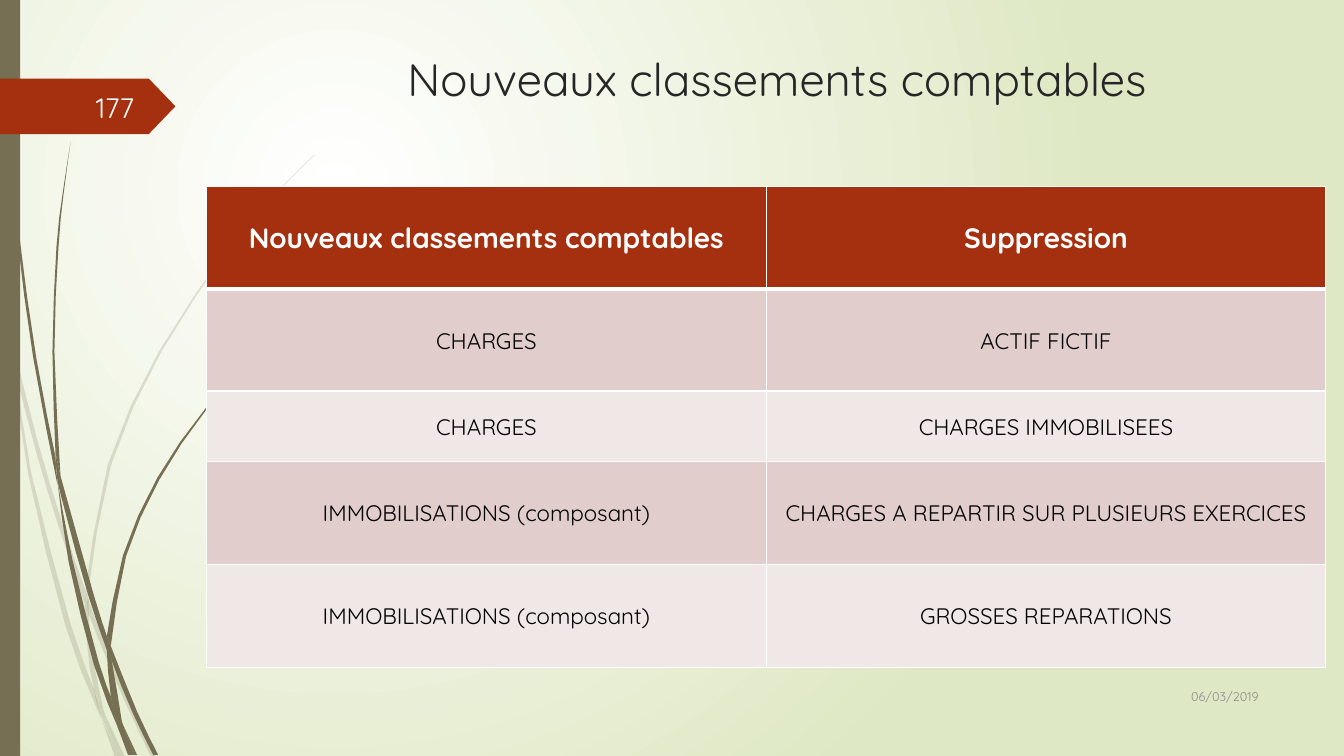
from lxml import etree
from pptx import Presentation
from pptx import util as u
from pptx.dml.color import RGBColor
from pptx.enum import shapes, text
from pptx.oxml.ns import qn

COLORS = {
    "white": "FFFFFF", "meadow": "DFE8C4", "stem": "766F54", "brick": "A53010",
    "title": "262626", "date": "8C8C8C", "number": "FEFFFF", "body": "000000",
    "rose": "E1CDCC", "blush": "F0E8E7",
}
FONT = "Quicksand"
CURVE_STEPS = 2

PALE_BLADES = [
    ([(.11, 3.5), (.09, 3.22), (0, 2.82)], [(0, 2.99), (.1, 3.44), (.11, 3.5)]),
    ([(.17, 3.76), (.36, 4.49), (.58, 5.22), (.84, 5.99)],
     [(.85, 5.86), (.62, 5.2), (.36, 4.33), (.14, 3.45)]),
    ([(.88, 5.96), (.88, 6.1), (1.23, 6.94), (1.5, 7.51)], [(1.55, 7.51), (1.27, 6.92), (.92, 6.07)]),
    ([(1.05, 7.11), (1.19, 7.51)], [(1.24, 7.51), (1.05, 7.11)]),
    ([(.11, 3.5), (.28, 4.7), (.65, 6.21), (.92, 6.93), (1.01, 7.14)],
     [(.99, 7.07), (.93, 6.83), (.7, 6.19), (.31, 4.69), (.17, 3.76)]),
    ([(.84, 5.99), (.87, 6.46), (.93, 6.83), (1.05, 7.11)], [(1.03, 7.06), (.91, 6.46), (.88, 6.08)]),
    ([(.88, 5.96), (.88, 5.84), (1.1, 4.62), (1.6, 3.49), (2.29, 2.45), (2.68, 1.98), (3.12, 1.54)],
     [(3.12, 1.53), (2.68, 1.97), (2.28, 2.44), (1.58, 3.48), (1.07, 4.61), (.85, 5.84)]),
    ([(1.01, 7.14), (1.14, 7.51)], [(1.19, 7.51), (1.01, 7.14)]),
    ([(.88, 6.1), (.88, 5.96)], [(.85, 5.86), (.84, 5.99)]),
    ([(.93, 6.83), (.99, 7.07), (1.19, 7.51)], [(1.19, 7.51), (1.05, 7.11), (.96, 6.92)]),
]
DARK_BLADES = [
    ([(.03, 0), (.07, 1.1), (.17, 2.33), (.33, 3.55), (.57, 4.81)],
     [(.55, 4.53), (.36, 3.55), (.19, 2.32), (.08, 1.09), (.04, 0)]),
    ([(.6, 4.72), (.64, 5.05), (.88, 5.92), (1.06, 6.45)], [(1.06, 6.31), (.93, 5.9), (.6, 4.72)]),
    ([(1.1, 6.41), (1.11, 6.56), (1.32, 7.08), (1.52, 7.49)], [(1.57, 7.49), (1.36, 7.06), (1.1, 6.41)]),
    ([(.57, 4.77), (.68, 5.57), (.93, 6.59), (1.17, 7.22)],
     [(1.1, 6.91), (.98, 6.57), (.72, 5.56), (.57, 4.77)]),
    ([(.6, 4.72), (.54, 3.49), (.58, 2.45), (.63, 1.93), (.7, 1.41)],
     [(.7, 1.41), (.62, 1.93), (.56, 2.45), (.52, 3.49), (.55, 4.49)]),
    ([(1.22, 7.19), (1.33, 7.49)], [(1.36, 7.49), (1.22, 7.19)]),
    ([(.55, 4.49), (.57, 4.77), (.64, 5.05)], [(.6, 4.72), (.55, 4.49)]),
    ([(1.1, 6.41), (1.11, 6.33), (1.25, 5.52), (1.58, 4.76), (2.05, 4.06), (2.61, 3.44)],
     [(2.6, 3.44), (2.04, 4.05), (1.56, 4.74), (1.22, 5.51), (1.06, 6.31)]),
    ([(1.17, 7.22), (1.27, 7.49)], [(1.31, 7.49), (1.17, 7.22)]),
    ([(1.06, 6.45), (1.1, 6.91), (1.22, 7.19)], [(1.21, 7.16), (1.11, 6.56), (1.06, 6.45)]),
    ([(1.06, 6.31), (1.06, 6.45)], [(1.11, 6.56), (1.1, 6.41)]),
    ([(1.1, 6.91), (1.17, 7.22), (1.3, 7.49)], [(1.33, 7.49), (1.22, 7.19), (1.1, 6.91)]),
]
CLASSEMENTS = [
    ("Nouveaux classements comptables", "Suppression"),
    ("CHARGES", "ACTIF FICTIF"),
    ("CHARGES", "CHARGES IMMOBILISEES"),
    ("IMMOBILISATIONS (composant)", "CHARGES A REPARTIR SUR PLUSIEURS EXERCICES"),
    ("IMMOBILISATIONS (composant)", "GROSSES REPARATIONS"),
]
ROW_HEIGHTS = [1.02, 1.01, .7, 1.02, 1.02]


def rgb(name):
    return RGBColor.from_string(COLORS[name])


def write(frame, words, size, color, align=text.PP_ALIGN.CENTER, bold=False):
    paragraph = frame.paragraphs[0]
    paragraph.alignment = align
    run = paragraph.add_run()
    run.text = words
    run.font.name = FONT
    run.font.size = u.Pt(size)
    run.font.bold = bold
    run.font.color.rgb = rgb(color)


def add_label(slide, box, words, anchor=text.MSO_ANCHOR.MIDDLE, **style):
    frame = slide.shapes.add_textbox(*map(u.Inches, box)).text_frame
    frame.word_wrap = True
    frame.vertical_anchor = anchor
    write(frame, words, **style)


def paint(shape, color, alpha=100):
    shape.shadow.inherit = False
    shape.fill.solid()
    shape.fill.fore_color.rgb = rgb(color)
    shape.line.fill.background()
    if alpha < 100:
        tint = shape.element.spPr.find(".//" + qn("a:srgbClr"))
        etree.SubElement(tint, qn("a:alpha"), val=str(alpha * 1000))


def smooth(edge):
    if len(edge) < 3:
        return edge
    padded = [edge[0], *edge, edge[-1]]
    curve = []
    for knots in zip(padded, padded[1:], padded[2:], padded[3:]):
        for step in range(CURVE_STEPS):
            t = step / CURVE_STEPS
            curve.append([
                (2 * q + (r - p) * t + (2 * p - 5 * q + 4 * r - s) * t ** 2
                 + (3 * q - p - 3 * r + s) * t ** 3) / 2
                for p, q, r, s in zip(*knots)])
    return curve + [edge[-1]]


def add_blade(slide, edges, alpha):
    outline = [(u.Inches(x), u.Inches(y)) for edge in edges for x, y in smooth(edge)]
    builder = slide.shapes.build_freeform(*outline[0])
    builder.add_line_segments(outline[1:], close=True)
    paint(builder.convert_to_shape(), "stem", alpha)


def add_backdrop(slide):
    fill = slide.background.fill
    fill.gradient()
    for position, (stop, color) in enumerate(zip(fill.gradient_stops, ("white", "meadow"))):
        stop.color.rgb = rgb(color)
        stop.position = position
    gradient = slide.element.find(".//" + qn("a:gradFill"))
    gradient.remove(gradient.find(qn("a:lin")))
    circle = etree.SubElement(gradient, qn("a:path"), path="circle")
    etree.SubElement(circle, qn("a:fillToRect"), l="50000", t="50000", r="100000", b="100000")


def add_grass(slide, box):
    for blades, alpha in ((PALE_BLADES, 20), (DARK_BLADES, 100)):
        for edges in blades:
            add_blade(slide, edges, alpha)
    border = slide.shapes.add_shape(shapes.MSO_SHAPE.RECTANGLE, *map(u.Inches, box))
    paint(border, "stem")


def add_page_tag(slide, box, number):
    left, top, width, height = box
    tag = slide.shapes.add_shape(shapes.MSO_SHAPE.PENTAGON, *map(u.Inches, box))
    tag.adjustments[0] = .48
    paint(tag, "brick")
    add_label(slide, (left + .58, top + .08, width - .89, .4), number,
              size=20, color="number", align=text.PP_ALIGN.RIGHT)


def set_borders(cell, **widths):
    properties = cell._tc.get_or_add_tcPr()
    for position, side in enumerate(("lnL", "lnR", "lnT", "lnB")):
        line = etree.Element(qn("a:" + side), w=str(u.Pt(widths.get(side, 1))))
        solid = etree.SubElement(line, qn("a:solidFill"))
        etree.SubElement(solid, qn("a:srgbClr"), val=COLORS["white"])
        properties.insert(position, line)


def add_classements(slide, box):
    table = slide.shapes.add_table(len(CLASSEMENTS), 2, *map(u.Inches, box)).table
    for column in table.columns:
        column.width = u.Inches(box[2] / 2)
    for r, (height, entries) in enumerate(zip(ROW_HEIGHTS, CLASSEMENTS)):
        table.rows[r].height = u.Inches(height)
        for c, words in enumerate(entries):
            cell = table.cell(r, c)
            cell.vertical_anchor = text.MSO_ANCHOR.MIDDLE
            cell.fill.solid()
            if r == 0:
                cell.fill.fore_color.rgb = rgb("brick")
                write(cell.text_frame, words, size=20, color="white", bold=True)
                set_borders(cell, lnB=3)
            else:
                cell.fill.fore_color.rgb = rgb("rose" if r % 2 else "blush")
                cell.margin_left = cell.margin_right = cell.margin_top = u.Inches(.01)
                cell.margin_bottom = 0
                write(cell.text_frame, words, size=16, color="body")
                set_borders(cell, lnT=3 if r == 1 else 1)


def main():
    deck = Presentation()
    deck.slide_width, deck.slide_height = u.Inches(13.33), u.Inches(7.5)
    slide = deck.slides.add_slide(deck.slide_layouts[6])
    add_backdrop(slide)
    add_grass(slide, (0, 0, .2, 7.5))
    add_page_tag(slide, (0, .78, 1.74, .55), "177")
    add_label(slide, (2.83, .46, 9.75, .9), "Nouveaux classements comptables",
              anchor=text.MSO_ANCHOR.TOP, size=32.4, color="title")
    add_label(slide, (11.33, 6.7, 1.25, .41), "06/03/2019",
              size=9, color="date", align=text.PP_ALIGN.RIGHT)
    add_classements(slide, (2.05, 1.85, 11.1, sum(ROW_HEIGHTS)))
    deck.save("out.pptx")


if __name__ == "__main__":
    main()
